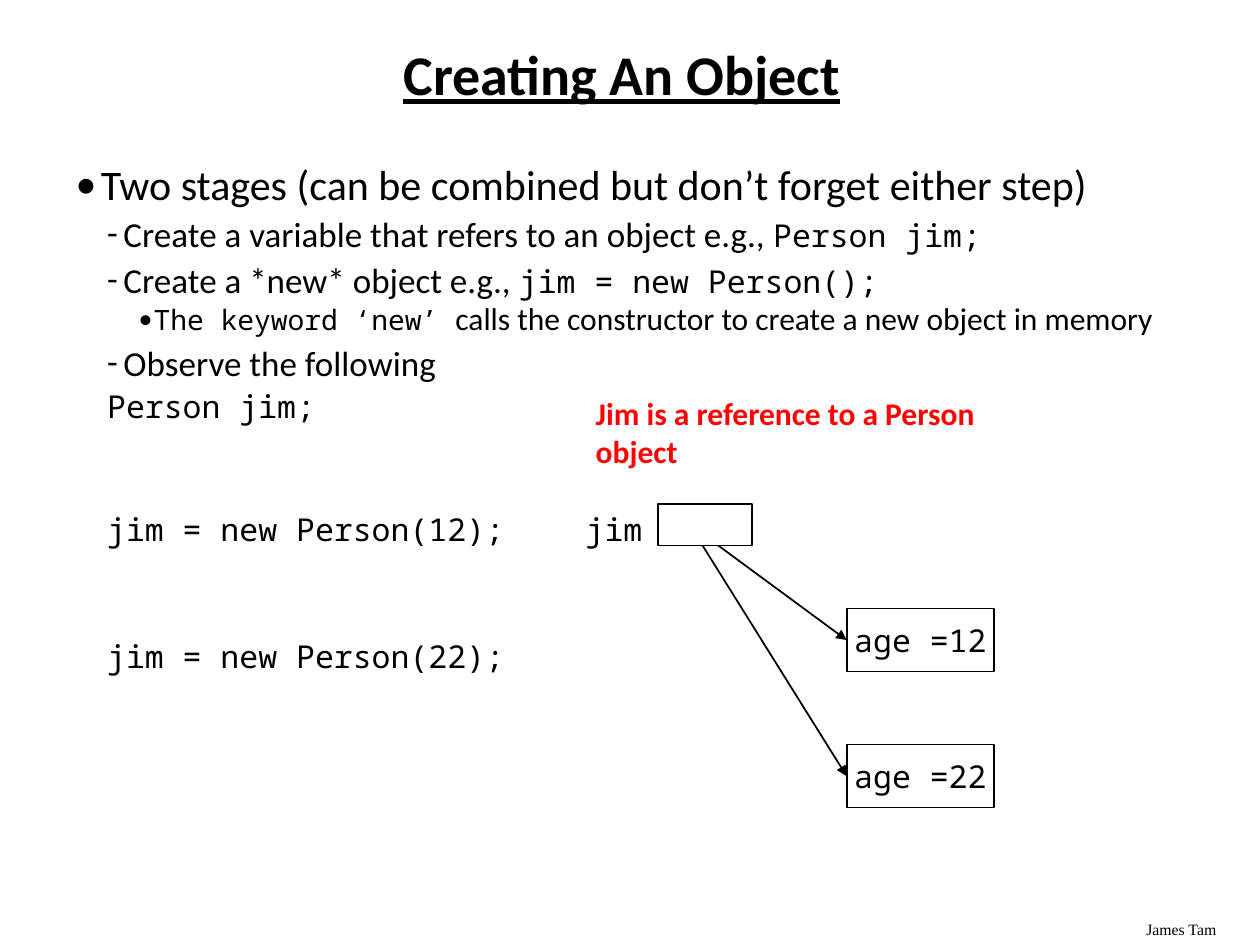
from pptx import Presentation
from pptx.dml.color import RGBColor
from pptx.enum.shapes import MSO_CONNECTOR as Connector, MSO_SHAPE as Shape
from pptx.enum.text import MSO_ANCHOR as Anchor, MSO_AUTO_SIZE as AutoSize, PP_ALIGN as Align
from pptx.oxml.ns import qn
from pptx.util import Inches, Pt
from lxml.etree import SubElement

COLORS = {"ink": "000000", "accent": "FF0000", "paper": "FFFFFF"}
SANS, MONO, SERIF = "Calibri", "Noto Sans Mono", "Times New Roman"
INDENTS = [(0.2, -0.2), (0.38, -0.13), (0.62, -0.12)]


def color(name):
    return RGBColor.from_string(COLORS[name])


def add_run(paragraph, text, size, font=SANS, ink="ink", bold=False, underline=False):
    run = paragraph.add_run()
    run.text = text
    run.font.name = font
    run.font.size = Pt(size)
    run.font.bold = bold
    run.font.underline = underline
    run.font.color.rgb = color(ink)


def place(shape, box):
    shape.left, shape.top, shape.width, shape.height = map(Inches, box)


def set_list_format(paragraph, level, bullet):
    paragraph.level = level
    properties = paragraph._p.get_or_add_pPr()
    margin, indent = INDENTS[level]
    properties.set("marL", str(Inches(margin)))
    properties.set("indent", str(Inches(indent)))
    if bullet:
        SubElement(properties, qn("a:buFont"), typeface=SANS)
        SubElement(properties, qn("a:buChar"), char=bullet)
    else:
        SubElement(properties, qn("a:buNone"))


def add_title(slide, box):
    title = slide.shapes.title
    place(title, box)
    frame = title.text_frame
    frame.auto_size = AutoSize.NONE
    frame.vertical_anchor = Anchor.MIDDLE
    paragraph = frame.paragraphs[0]
    paragraph.alignment = Align.CENTER
    paragraph.line_spacing = 0.9
    add_run(paragraph, "Creating An Object", 32, bold=True, underline=True)


def add_body(slide, box):
    items = [
        (0, "•", 2, [("Two stages (can be combined but don’t forget either step)", 24, SANS)]),
        (1, "-", 2, [("Create a variable that refers to an object e.g., ", 20, SANS),
                     ("Person jim;", 18, MONO)]),
        (1, "-", 2, [("Create a *new* object e.g., ", 20, SANS),
                     ("jim = new Person();", 18, MONO)]),
        (2, "•", 2, [("The keyword ‘new’ ", 16, MONO),
                     ("calls the constructor to create a new object in memory", 18, SANS)]),
        (1, "-", 2, [("Observe the following", 20, SANS)]),
        (1, None, 2, [("Person jim;", 18, MONO)]),
        (1, None, 49, [("jim = new Person(12);", 18, MONO)]),
        (1, None, 51, [("jim = new Person(22);", 18, MONO)]),
    ]
    body = slide.placeholders[1]
    place(body, box)
    frame = body.text_frame
    frame.auto_size = AutoSize.NONE
    for index, (level, bullet, space, runs) in enumerate(items):
        paragraph = frame.add_paragraph() if index else frame.paragraphs[0]
        paragraph.space_before = Pt(space)
        paragraph.line_spacing = 0.9 if level == 2 else 1.0
        set_list_format(paragraph, level, bullet)
        for text, size, font in runs:
            add_run(paragraph, text, size, font)


def add_label(slide, box, text, size, **style):
    label = slide.shapes.add_textbox(*map(Inches, box))
    label.text_frame.word_wrap = True
    add_run(label.text_frame.paragraphs[0], text, size, **style)


def add_rectangle(slide, box):
    rectangle = slide.shapes.add_shape(Shape.RECTANGLE, *map(Inches, box))
    rectangle.shadow.inherit = False
    rectangle.line.color.rgb = color("ink")
    rectangle.line.width = Pt(1)
    return rectangle


def add_object(slide, box, text, arrow_start):
    rectangle = add_rectangle(slide, box)
    rectangle.fill.background()
    frame = rectangle.text_frame
    frame.word_wrap = False
    frame.vertical_anchor = Anchor.MIDDLE
    frame.paragraphs[0].alignment = Align.CENTER
    add_run(frame.paragraphs[0], text, 18, MONO)

    left, top, _, height = box
    arrow = slide.shapes.add_connector(
        Connector.STRAIGHT, *map(Inches, (*arrow_start, left, top + height / 2)))
    arrow.end_connect(rectangle, 1)
    arrow.line.color.rgb = color("ink")
    arrow.line.width = Pt(1)
    SubElement(arrow.line._get_or_add_ln(), qn("a:tailEnd"), type="triangle")
    SubElement(arrow._element.spPr, qn("a:effectLst"))


def add_reference_diagram(slide, box):
    left, top, width, _ = box
    add_label(slide, (left, top + 0.92, 0.67, 0.4), "jim", 18, font=MONO)
    add_label(slide, (left + 0.08, top, 3.5, 0.7), "Jim is a reference to a Person object",
              18, ink="accent", bold=True)
    object_width = 1.17
    for offset, text in ((2.83, "age =22"), (1.75, "age =12")):
        add_object(slide, (left + width - object_width, top + offset, object_width, 0.5),
                   text, (left + 0.92, top + 1.08))
    reference = add_rectangle(slide, (left + 0.67, top + 0.92, 0.75, 0.33))
    reference.fill.solid()
    reference.fill.fore_color.rgb = color("paper")


def main():
    presentation = Presentation()
    presentation.slide_width = Inches(10)
    presentation.slide_height = Inches(7.5)
    slide = presentation.slides.add_slide(presentation.slide_layouts[1])
    add_title(slide, (0.47, 0.33, 8.93, 0.57))
    add_body(slide, (0.5, 1.21, 8.94, 4.31))
    add_reference_diagram(slide, (4.55, 3.08, 3.34, 3.33))
    add_label(slide, (9, 7.25, 1, 0.25), "James Tam", 9, font=SERIF)
    presentation.save("out.pptx")


if __name__ == "__main__":
    main()
